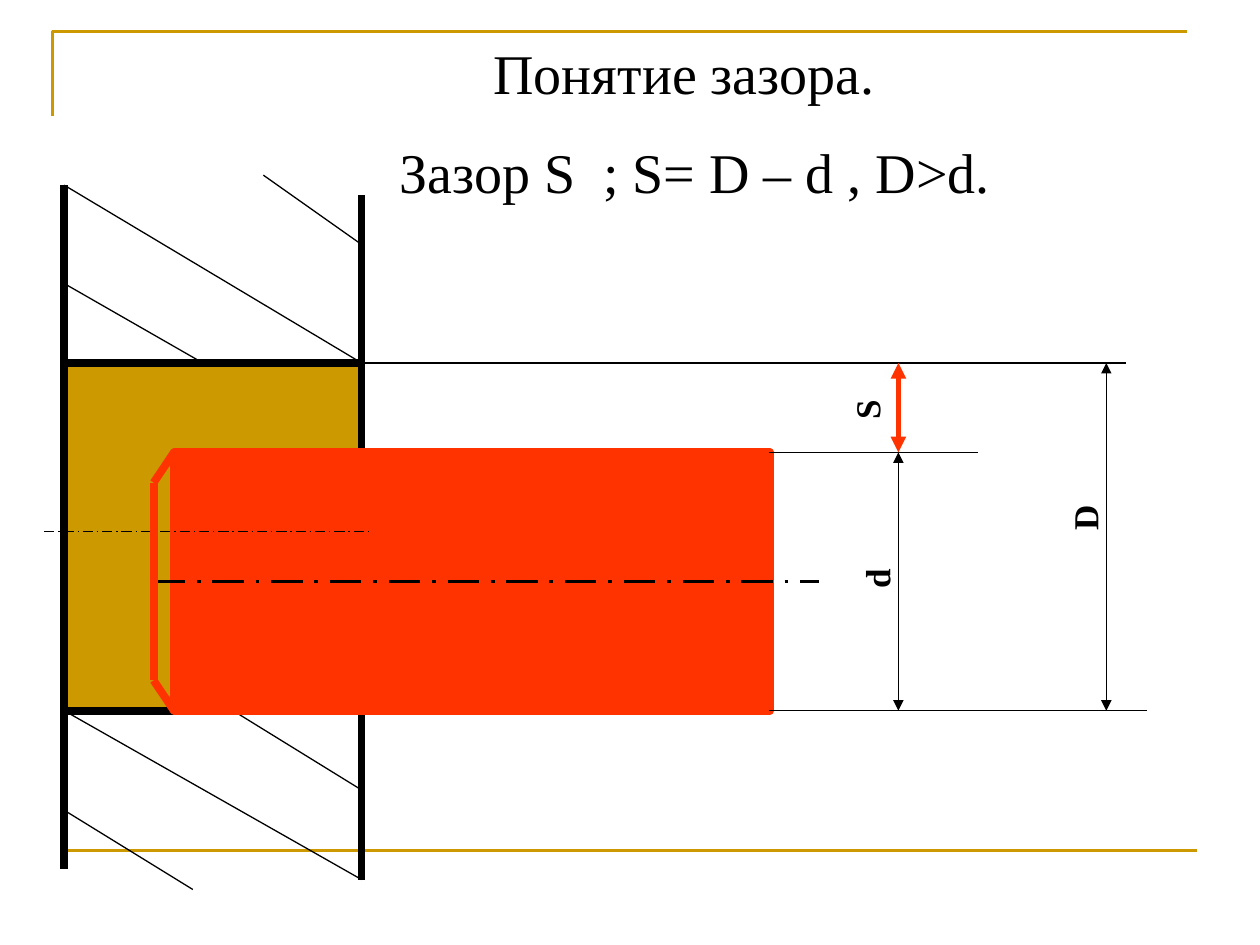
from dataclasses import dataclass

import pptx
import pptx.dml.color
import pptx.enum.dml
import pptx.enum.shapes
import pptx.enum.text
import pptx.oxml.ns
import pptx.oxml.xmlchemy
import pptx.util
from lxml import etree

Pt = pptx.util.Pt
qn = pptx.oxml.ns.qn
ALIGN = pptx.enum.text.PP_ALIGN


@dataclass(frozen=True)
class Theme:
    ink: str = "000000"
    gold: str = "CC9900"
    red: str = "FF3300"
    font: str = "Times New Roman"
    title: float = 32
    label: float = 20
    thin: float = 0.75
    frame: float = 1.5
    axis: float = 2.25
    gap: float = 3
    thick: float = 4.5


THEME = Theme()


@dataclass(frozen=True)
class Line:
    x1: float
    y1: float
    x2: float
    y2: float
    width: float = THEME.thin
    color: str = THEME.ink
    dashed: bool = False
    arrows: bool = False


@dataclass(frozen=True)
class Block:
    left: float
    top: float
    right: float
    bottom: float
    fill: str
    line: str


@dataclass(frozen=True)
class Label:
    text: str
    cx: float
    cy: float
    length: float


LEFT, RIGHT = 36.7, 206.6
HOLE_TOP, BOTTOM = 207.4, 406.1
SHAFT_LEFT, SHAFT_TOP, SHAFT_RIGHT = 99.4, 258.5, 439.9
NOSE, NOSE_TOP, NOSE_BOTTOM = 87.8, 275.8, 388.8
WALL_TOP, WALL_BOTTOM = 105.8, 502.6
DIM_D, DIM_SHAFT = 632.2, 513.4
LABEL_HEIGHT = 31

HOLE = Block(LEFT, HOLE_TOP, RIGHT, BOTTOM, THEME.gold, THEME.ink)
SHAFT = Block(SHAFT_LEFT, SHAFT_TOP, SHAFT_RIGHT, BOTTOM, THEME.red, THEME.red)

WALLS = [
    Line(LEFT, HOLE_TOP, LEFT, WALL_TOP, THEME.thick),
    Line(RIGHT, HOLE_TOP, RIGHT, 111.6, THEME.thick),
    Line(LEFT, BOTTOM, LEFT, 496.8, THEME.thick),
    Line(RIGHT, BOTTOM, RIGHT, WALL_BOTTOM, THEME.thick),
]
HATCHING = [
    Line(LEFT, BOTTOM, RIGHT, WALL_BOTTOM),
    Line(133.2, BOTTOM, RIGHT, 451.4),
    Line(LEFT, 463, 110.2, 508.3),
    Line(RIGHT, HOLE_TOP, LEFT, WALL_TOP),
    Line(LEFT, 162, 115.9, HOLE_TOP),
    Line(150.5, 100.1, RIGHT, 139.7),
]
AXES = [
    Line(25.2, 303.8, 212.4, 303.8, dashed=True),
    Line(87.8, 332.3, 468, 332.3, THEME.axis, dashed=True),
]
CHAMFER = [
    Line(NOSE, NOSE_TOP, NOSE, NOSE_BOTTOM, THEME.thick, THEME.red),
    Line(NOSE, NOSE_BOTTOM, SHAFT_LEFT, BOTTOM, THEME.thick, THEME.red),
    Line(NOSE, NOSE_TOP, SHAFT_LEFT, SHAFT_TOP, THEME.thick, THEME.red),
]
DIMENSIONS = [
    Line(439.2, BOTTOM, 655.2, BOTTOM),
    Line(439.2, SHAFT_TOP, 558.7, SHAFT_TOP),
    Line(RIGHT, HOLE_TOP, 643.7, HOLE_TOP),
    Line(DIM_D, HOLE_TOP, DIM_D, BOTTOM, arrows=True),
    Line(DIM_SHAFT, SHAFT_TOP, DIM_SHAFT, BOTTOM, arrows=True),
    Line(DIM_SHAFT, HOLE_TOP, DIM_SHAFT, SHAFT_TOP, THEME.gap, THEME.red, arrows=True),
]
LABELS = [
    Label("d", 500.8, 308.5, 69.8),
    Label("S", 495, 225, 43.9),
    Label("D", 619.6, 284.8, 51.1),
]


def rgb(value: str) -> pptx.dml.color.RGBColor:
    return pptx.dml.color.RGBColor.from_string(value)


def write(p, text: str, *, size: float, bold: bool = False, align=ALIGN.LEFT,
          before: float = 0, indent: float = 0) -> None:
    p.alignment = align
    p.space_before = Pt(before)
    pPr = p._p.get_or_add_pPr()
    pPr.set("marL", str(Pt(indent)))
    pPr.set("indent", "0")
    r = p.add_run()
    r.text = text
    r.font.name = THEME.font
    r.font.size = Pt(size)
    r.font.bold = bold
    r.font.color.rgb = rgb(THEME.ink)


def draw_line(s, line: Line) -> None:
    c = s.shapes.add_connector(pptx.enum.shapes.MSO_CONNECTOR.STRAIGHT,
                               Pt(line.x1), Pt(line.y1), Pt(line.x2), Pt(line.y2))
    c.line.color.rgb = rgb(line.color)
    c.line.width = Pt(line.width)
    if line.dashed:
        c.line.dash_style = pptx.enum.dml.MSO_LINE.LONG_DASH_DOT
    if line.arrows:
        ln = c.line._get_or_add_ln()
        for end in ("a:headEnd", "a:tailEnd"):
            etree.SubElement(ln, qn(end), type="triangle")
    etree.SubElement(c._element.spPr, qn("a:effectLst"))


def draw_block(s, block: Block) -> None:
    sp = s.shapes.add_shape(pptx.enum.shapes.MSO_SHAPE.RECTANGLE,
                            Pt(block.left), Pt(block.top),
                            Pt(block.right - block.left), Pt(block.bottom - block.top))
    sp.shadow.inherit = False
    sp.fill.solid()
    sp.fill.fore_color.rgb = rgb(block.fill)
    sp.line.color.rgb = rgb(block.line)
    sp.line.width = Pt(THEME.thick)


def draw_label(s, label: Label) -> None:
    sp = s.shapes.add_textbox(Pt(label.cx - label.length / 2), Pt(label.cy - LABEL_HEIGHT / 2),
                              Pt(label.length), Pt(LABEL_HEIGHT))
    sp.rotation = 270
    sp.text_frame.word_wrap = True
    write(sp.text_frame.paragraphs[0], label.text, size=THEME.label, bold=True)


def draw_frame(s) -> None:
    fb = s.shapes.build_freeform(Pt(30.2), Pt(66.2))
    fb.add_line_segments([(Pt(30.2), Pt(18)), (Pt(678.2), Pt(18))], close=False)
    sp = fb.convert_to_shape()
    sp.shadow.inherit = False
    sp.fill.background()
    sp.line.color.rgb = rgb(THEME.gold)
    sp.line.width = Pt(THEME.frame)
    draw_line(s, Line(36, 486, 684, 486, THEME.frame, THEME.gold))


def fill_title(s) -> None:
    sp = s.shapes.title
    sp.left, sp.top, sp.width, sp.height = Pt(190), Pt(9.4), Pt(386), Pt(108)
    tf = sp.text_frame
    tf.word_wrap = True
    tf.auto_size = pptx.enum.text.MSO_AUTO_SIZE.NONE
    tf.vertical_anchor = pptx.enum.text.MSO_ANCHOR.TOP
    tf.margin_top = Pt(12.5)
    write(tf.paragraphs[0], "Понятие зазора.", size=THEME.title, align=ALIGN.CENTER, indent=16)
    write(tf.add_paragraph(), "Зазор S  ; S= D – d , D>d.", size=THEME.title,
          before=18, indent=31)


def main() -> None:
    prs = pptx.Presentation()
    prs.slide_width, prs.slide_height = Pt(720), Pt(540)
    s = prs.slides.add_slide(prs.slide_layouts[5])
    fill_title(s)
    draw_frame(s)
    draw_block(s, HOLE)
    for line in WALLS + HATCHING:
        draw_line(s, line)
    draw_block(s, SHAFT)
    for line in AXES + CHAMFER + DIMENSIONS:
        draw_line(s, line)
    for label in LABELS:
        draw_label(s, label)
    prs.save("out.pptx")


if __name__ == "__main__":
    main()
